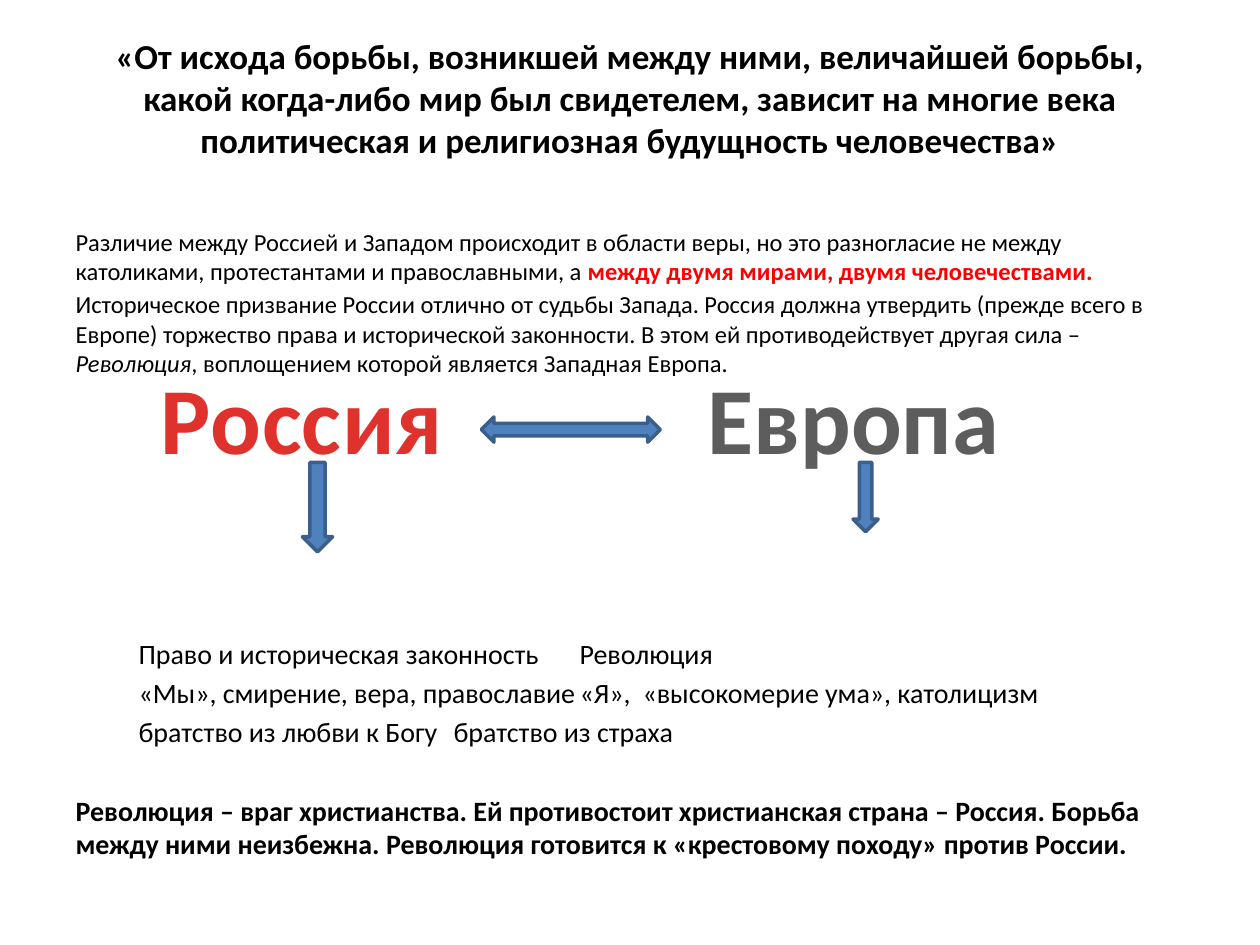
"""Build a slide contrasting Russia and Europe."""
from lxml.etree import SubElement
from pptx import Presentation
from pptx.dml.color import RGBColor
from pptx.enum.shapes import MSO_SHAPE
from pptx.enum.text import MSO_ANCHOR, MSO_AUTO_SIZE, PP_ALIGN
from pptx.oxml.ns import qn
from pptx.util import Inches, Pt

BLACK = RGBColor(0x00, 0x00, 0x00)
RED = RGBColor(0xFF, 0x00, 0x00)
RUSSIA_RED = RGBColor(0xE0, 0x32, 0x2D)
EUROPE_GRAY = RGBColor(0x5D, 0x5D, 0x5D)
ARROW_BLUE = RGBColor(0x4F, 0x81, 0xBD)
ARROW_EDGE = RGBColor(0x3A, 0x5F, 0x8C)


def place(shape, left, top, width, height):
    bounds = {"left": left, "top": top, "width": width, "height": height}
    for name, value in bounds.items():
        setattr(shape, name, Inches(value))


def add_span(para, text, size, color=BLACK, **styles):
    span = para.add_run()
    span.text = text
    span.font.color.rgb = color
    settings = {"name": "Calibri", "size": Pt(size), "bold": False, **styles}
    for name, value in settings.items():
        setattr(span.font, name, value)
    return span


deck = Presentation()
deck.slide_width, deck.slide_height = Inches(10), Inches(7.5)
page = deck.slides.add_slide(deck.slide_layouts[1])

title = page.shapes.title
place(title, 0.5, 0.3, 9, 1.25)
title_format = {
    "auto_size": MSO_AUTO_SIZE.NONE,
    "vertical_anchor": MSO_ANCHOR.MIDDLE,
    "margin_bottom": Inches(0.35),
}
for name, value in title_format.items():
    setattr(title.text_frame, name, value)
title_para = title.text_frame.paragraphs[0]
title_para.alignment = PP_ALIGN.CENTER
add_span(
    title_para,
    "«От исхода борьбы, возникшей между ними, величайшей борьбы, "
    "какой когда-либо мир был свидетелем, зависит на многие века "
    "политическая и религиозная будущность человечества»",
    20,
    bold=True,
)

body = page.placeholders[1]
place(body, 0.5, 1.75, 9, 4.95)
body.text_frame.auto_size = MSO_AUTO_SIZE.NONE
paragraphs = [
    (14, 0, [], [
        ("Различие между Россией и Западом происходит в области веры, но это "
         "разногласие не между католиками, протестантами и православными, а ", {}),
        ("между двумя мирами, двумя человечествами.", {"color": RED, "bold": True}),
    ]),
    (14, 2, [], [
        ("Историческое призвание России отлично от судьбы Запада. Россия должна "
         "утвердить (прежде всего в Европе) торжество права и исторической "
         "законности. В этом ей противодействует другая сила – ", {}),
        ("Революция", {"italic": True}),
        (", воплощением которой является Западная Европа.", {}),
    ]),
    (16, 148, [0.6, 5.53], [("\tПраво и историческая законность\tРеволюция", {})]),
    (16, 3, [0.5, 4.82, 5.38], [
        ("\t«Мы», смирение, вера, православие\t«Я»,\t«высокомерие ума», католицизм", {}),
    ]),
    (16, 3, [1.1, 5.62], [("\tбратство из любви к Богу\tбратство из страха", {})]),
    (16, 26, [], [
        ("Революция – враг христианства. Ей противостоит христианская страна – "
         "Россия. Борьба между ними неизбежна. Революция готовится к "
         "«крестовому походу» против России.", {"bold": True}),
    ]),
]
for index, (size, gap, tabs, spans) in enumerate(paragraphs):
    para = body.text_frame.add_paragraph() if index else body.text_frame.paragraphs[0]
    para.space_before = Pt(gap)
    properties = para._p.get_or_add_pPr()
    properties.set("marL", "0")
    properties.set("indent", "0")
    SubElement(properties, qn("a:buNone"))
    if tabs:
        tab_list = SubElement(properties, qn("a:tabLst"))
        for position in tabs:
            SubElement(tab_list, qn("a:tab"), pos=str(int(Inches(position))), algn="l")
    for text, styles in spans:
        add_span(para, text, size, **styles)

sides = [
    ("Россия", 0.98, 2.83, RUSSIA_RED, 50),
    ("Европа", 5.24, 3.07, EUROPE_GRAY, 0),
]
for text, left, width, color, spacing in sides:
    box = page.shapes.add_textbox(Inches(left), Inches(2.81), Inches(width), Inches(1.01))
    box.text_frame.word_wrap = True
    para = box.text_frame.paragraphs[0]
    para.alignment = PP_ALIGN.CENTER
    span = add_span(para, text, 54, color, bold=True)
    span.font._element.set("spc", str(spacing))

arrows = [
    (MSO_SHAPE.LEFT_RIGHT_ARROW, 3.82, 3.31, 1.42, 0.2),
    (MSO_SHAPE.DOWN_ARROW, 2.4, 3.67, 0.24, 0.71),
    (MSO_SHAPE.DOWN_ARROW, 6.77, 3.67, 0.2, 0.55),
]
for kind, *bounds in arrows:
    arrow = page.shapes.add_shape(kind, *map(Inches, bounds))
    arrow.shadow.inherit = False
    arrow.fill.solid()
    arrow.fill.fore_color.rgb = ARROW_BLUE
    arrow.line.color.rgb = ARROW_EDGE
    arrow.line.width = Pt(2)

deck.save("out.pptx")
